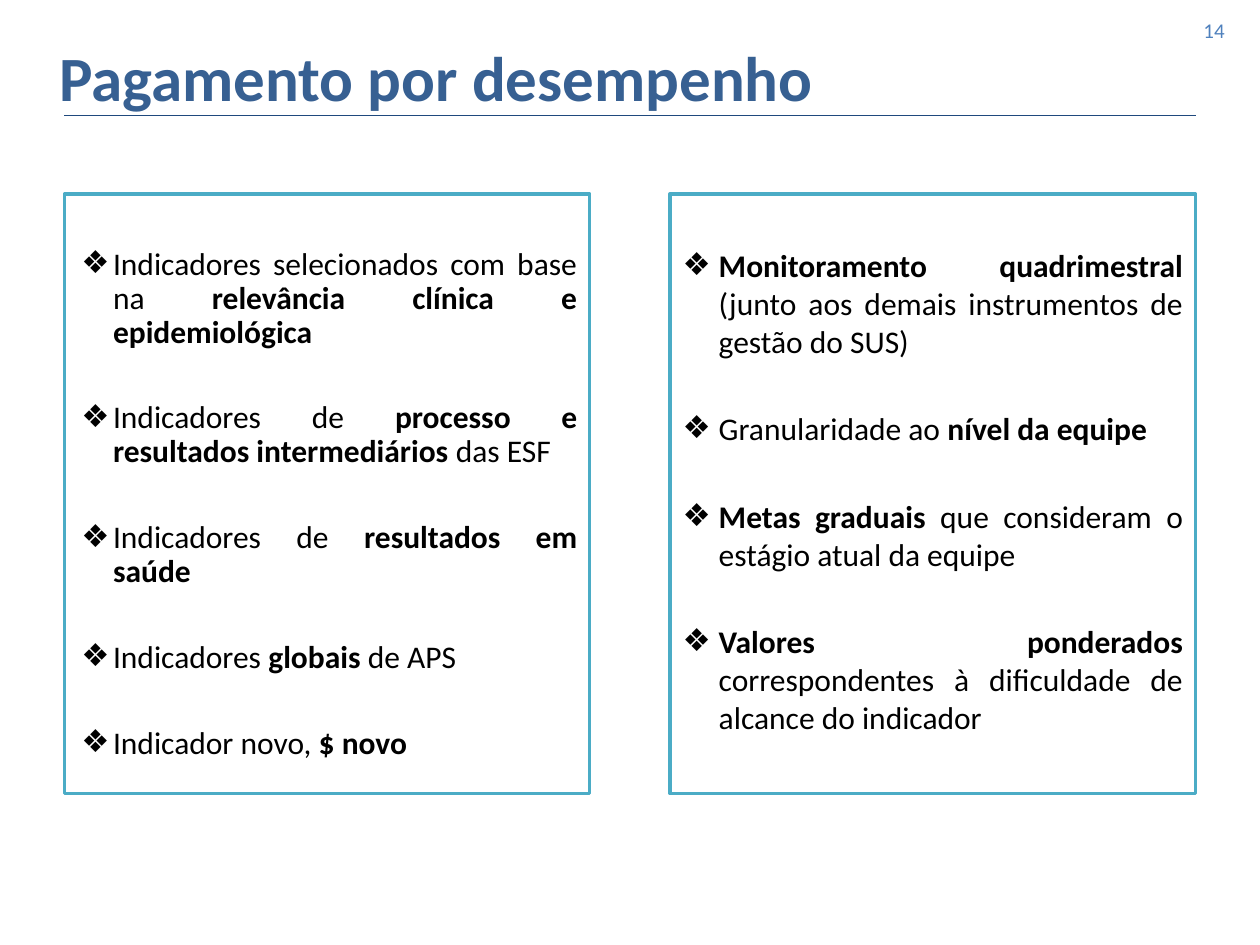
from lxml import etree
from pptx import Presentation
from pptx.dml.color import RGBColor as RGB
from pptx.enum.shapes import MSO_CONNECTOR as Link, MSO_SHAPE as Shape
from pptx.enum.text import MSO_ANCHOR as Anchor, MSO_AUTO_SIZE as Fit, PP_ALIGN as Align
from pptx.oxml.ns import qn
from pptx.util import Cm, Pt

COLORS = {"title": "376092", "rule": "1F497D", "edge": "4BACC6",
          "number": "4F81BD", "text": "000000", "fill": "FFFFFF"}


def style(font, size, color, bold=False):
    font.name = "Calibri"
    font.size = Pt(size)
    font.bold = bold
    font.color.rgb = RGB.from_string(COLORS[color])


def bullet(para, hang):
    """Give the paragraph a diamond bullet with a hanging indent."""
    props = para._p.get_or_add_pPr()
    props.set("marL", str(Cm(0.73)))
    props.set("indent", str(-Cm(hang)))
    etree.SubElement(props, qn("a:buFont")).set("typeface", "Calibri")
    etree.SubElement(props, qn("a:buChar")).set("char", "❖")


prs = Presentation()
prs.slide_width, prs.slide_height = Cm(25.4), Cm(19.05)
slide = prs.slides.add_slide(prs.slide_layouts[5])
shapes = slide.shapes

# Title and the rule below it
title = shapes.title
title.left, title.top, title.width, title.height = Cm(0.94), Cm(0.53), Cm(21.9), Cm(2.21)
frame = title.text_frame
frame.text = "Pagamento por desempenho"
frame.auto_size = Fit.NONE
frame.vertical_anchor = Anchor.MIDDLE
para = frame.paragraphs[0]
para.alignment = Align.LEFT
para.line_spacing = 0.9
style(para.runs[0].font, 36, "title", True)

rule = shapes.add_connector(Link.STRAIGHT, Cm(1.3), Cm(2.33), Cm(24.1), Cm(2.33))
rule.line.color.rgb = RGB.from_string(COLORS["rule"])
rule.line.width = Pt(1)
etree.SubElement(rule._element.spPr, qn("a:effectLst"))

# Panels: left, top inset, hang, line spacing, gap, items of (text, bold) parts
panels = [
    (1.3, 1.09, 0.64, 0.9, 29.5, [
        [("Indicadores selecionados com base na ", False),
         ("relevância clínica e epidemiológica", True)],
        [("Indicadores de ", False), ("processo e resultados intermediários ", True),
         ("das ESF", False)],
        [("Indicadores de ", False), ("resultados em saúde", True)],
        [("Indicadores ", False), ("globais", True), (" de APS", False)],
        [("Indicador novo, ", False), ("$ novo", True)],
    ]),
    (13.51, 1.05, 0.79, 1.0, 28.5, [
        [("Monitoramento quadrimestral ", True),
         ("(junto aos demais instrumentos de gestão do SUS)", False)],
        [("Granularidade ao ", False), ("nível da equipe", True)],
        [("Metas graduais ", True), ("que consideram o estágio atual da equipe", False)],
        [("Valores ponderados ", True),
         ("correspondentes à dificuldade de alcance do indicador", False)],
    ]),
]
for left, inset, hang, spacing, gap, items in panels:
    panel = shapes.add_shape(Shape.RECTANGLE, Cm(left), Cm(3.91), Cm(10.59), Cm(12.09))
    panel.shadow.inherit = False
    panel.fill.solid()
    panel.fill.fore_color.rgb = RGB.from_string(COLORS["fill"])
    panel.line.color.rgb = RGB.from_string(COLORS["edge"])
    panel.line.width = Pt(2)
    frame = panel.text_frame
    frame.word_wrap = True
    frame.vertical_anchor = Anchor.TOP
    frame.margin_top = Cm(inset)
    for i, parts in enumerate(items):
        para = frame.add_paragraph() if i else frame.paragraphs[0]
        bullet(para, hang)
        para.alignment = Align.JUSTIFY
        para.line_spacing = spacing
        para.space_before = Pt(gap if i else 0)
        for text, bold in parts:
            run = para.add_run()
            run.text = text
            style(run.font, 18, "text", bold)

# Slide number
number = shapes.add_textbox(Cm(19.02), Cm(0.1), Cm(5.92), Cm(1.02))
frame = number.text_frame
frame.text = "14"
frame.word_wrap = True
frame.vertical_anchor = Anchor.MIDDLE
para = frame.paragraphs[0]
para.alignment = Align.RIGHT
style(para.runs[0].font, 12, "number")

prs.save("out.pptx")
